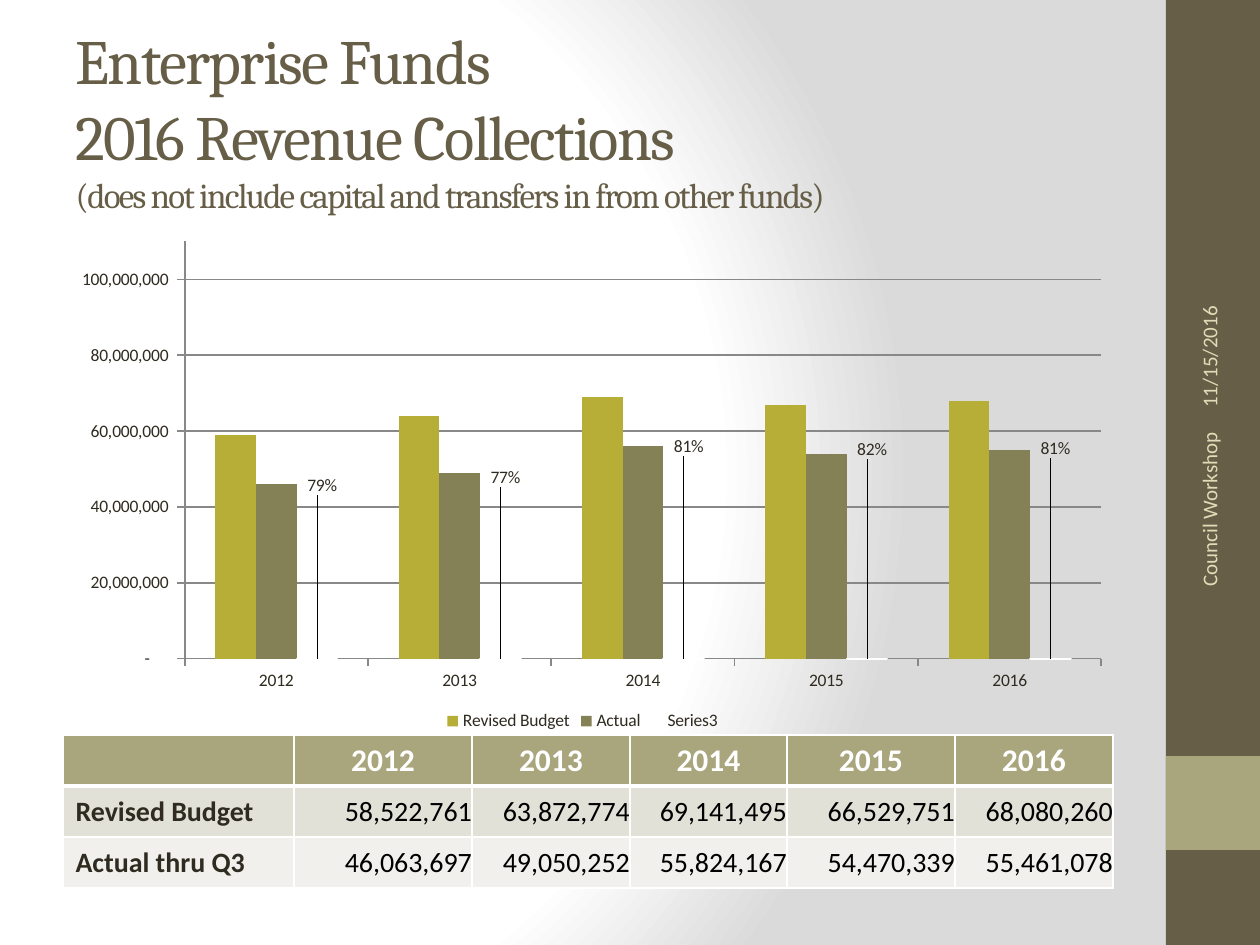
"""Build the enterprise funds revenue slide with its chart and table."""
from dataclasses import dataclass

from lxml.etree import SubElement
from pptx import Presentation
from pptx.chart.data import CategoryChartData
from pptx.dml.color import RGBColor
from pptx.enum.chart import XL_CHART_TYPE, XL_LABEL_POSITION, XL_LEGEND_POSITION, XL_TICK_MARK
from pptx.enum.shapes import MSO_SHAPE
from pptx.enum.text import MSO_ANCHOR, MSO_AUTO_SIZE, PP_ALIGN
from pptx.oxml import parse_xml
from pptx.oxml.ns import nsdecls, qn
from pptx.util import Pt

SCALE = 914400 / 126


@dataclass(frozen=True)
class Theme:
    dark: str = "675E47"
    khaki: str = "A9A57C"
    ink: str = "2F2B20"
    black: str = "000000"
    white: str = "FFFFFF"
    shade: str = "DADADA"
    cream: str = "DFDCB7"
    line: str = "888888"
    bars: tuple = ("B7AE38", "858157", "FFFFFF")
    bands: tuple = ("E2E1D7", "F1F0EC")
    serif: str = "Cambria"
    sans: str = "Calibri"
    title: int = 36
    note: int = 20
    head: int = 18
    cell: int = 16
    side: int = 12
    small: int = 10


def px(*sizes):
    return [round(size * SCALE) for size in sizes]


class Deck:
    def __init__(self, theme):
        self.theme = theme
        self.prs = Presentation()
        self.prs.slide_width, self.prs.slide_height = px(1260, 945)
        self.slide = self.prs.slides.add_slide(self.prs.slide_layouts[5])
        self.shapes = self.slide.shapes

    def style(self, font, size, color, face=None, bold=False):
        font.size = Pt(size)
        font.color.rgb = RGBColor.from_string(color)
        font.name = face or self.theme.sans
        font.bold = bold

    def paint(self, fill, color):
        fill.solid()
        fill.fore_color.rgb = RGBColor.from_string(color)

    def stroke(self, line, color):
        line.color.rgb = RGBColor.from_string(color)
        line.width = Pt(1)

    def backdrop(self):
        stops = ((0, self.theme.white), (75, self.theme.white), (100, self.theme.shade))
        marks = "".join(f'<a:gs pos="{at * 1000}"><a:srgbClr val="{color}"/></a:gs>'
                        for at, color in stops)
        back = parse_xml(
            f'<p:bg {nsdecls("p", "a")}><p:bgPr><a:gradFill rotWithShape="1">'
            f'<a:gsLst>{marks}</a:gsLst><a:path path="circle">'
            '<a:fillToRect l="20000" t="50000" r="100000" b="50000"/></a:path>'
            '</a:gradFill><a:effectLst/></p:bgPr></p:bg>')
        self.slide.element.find(qn("p:cSld")).insert(0, back)

    def block(self, box, color):
        shape = self.shapes.add_shape(MSO_SHAPE.RECTANGLE, *px(*box))
        shape.shadow.inherit = False
        self.paint(shape.fill, color)
        shape.line.fill.background()

    def title(self, box, lines):
        shape = self.shapes.title
        shape.left, shape.top, shape.width, shape.height = px(*box)
        frame = shape.text_frame
        frame.text = "\n".join(text for text, size in lines)
        frame.word_wrap = True
        frame.auto_size = MSO_AUTO_SIZE.NONE
        frame.vertical_anchor = MSO_ANCHOR.MIDDLE
        for para, (text, size) in zip(frame.paragraphs, lines):
            para.alignment = PP_ALIGN.LEFT
            run = para.runs[0]
            self.style(run.font, size, self.theme.dark, self.theme.serif)
            run.font._element.set("spc", "-100")

    def side(self, box, text, align):
        shape = self.shapes.add_textbox(*px(*box))
        shape.rotation = 270
        frame = shape.text_frame
        frame.text = text
        frame.word_wrap = True
        frame.vertical_anchor = MSO_ANCHOR.MIDDLE
        para = frame.paragraphs[0]
        para.alignment = align
        self.style(para.runs[0].font, self.theme.side, self.theme.cream)

    def edge(self, cell, base):
        props = cell._tc.get_or_add_tcPr()
        for spot, (tag, width) in enumerate(zip("LRTB", (1, 1, 1, base))):
            props.insert(spot, parse_xml(
                f'<a:ln{tag} {nsdecls("a")} w="{width * 12700}"><a:solidFill>'
                f'<a:srgbClr val="{self.theme.white}"/></a:solidFill></a:ln{tag}>'))

    def table(self, box, widths, rows):
        theme = self.theme
        grid = self.shapes.add_table(len(rows), len(widths), *px(*box)).table
        for col, width in zip(grid.columns, px(*widths)):
            col.width = width
        for r, row in enumerate(rows):
            grid.rows[r].height = px(box[3] / len(rows))[0]
            for c, text in enumerate(row):
                cell = grid.cell(r, c)
                cell.text = text
                self.paint(cell.fill, theme.bands[r - 1] if r else theme.khaki)
                self.edge(cell, 1 if r else 3)
                para = cell.text_frame.paragraphs[0]
                if r == 0:
                    look = theme.head, theme.white, PP_ALIGN.CENTER
                elif c == 0:
                    look = theme.cell, theme.ink, PP_ALIGN.LEFT
                else:
                    look = theme.cell, theme.black, PP_ALIGN.RIGHT
                    cell.margin_left = cell.margin_right = 0
                    cell.margin_top = cell.margin_bottom = 0
                if r:
                    cell.vertical_anchor = MSO_ANCHOR.MIDDLE
                para.alignment = look[2]
                for run in para.runs:
                    self.style(run.font, look[0], look[1], bold=r == 0 or c == 0)

    def chart(self, box, years, series, rises):
        theme = self.theme
        data = CategoryChartData()
        data.categories = years
        for name, values, form in series:
            data.add_series(name, values, form)
        chart = self.shapes.add_chart(
            XL_CHART_TYPE.COLUMN_CLUSTERED, *px(*box), data).chart
        chart.has_title = False
        self.style(chart.font, theme.small, theme.ink)
        chart.has_legend = True
        chart.legend.position = XL_LEGEND_POSITION.BOTTOM
        chart.legend.include_in_layout = False
        plot = chart.plots[0]
        plot.gap_width, plot.overlap, plot.vary_by_categories = 150, 0, False
        for one, color in zip(plot.series, theme.bars):
            self.paint(one.format.fill, color)
        self.stroke(plot.series[-1].format.line, theme.white)
        axis = chart.value_axis
        axis.minimum_scale, axis.maximum_scale, axis.major_unit = 0, 110_000_000, 20_000_000
        axis.tick_labels.number_format = '_(* #,##0_);_(* \\(#,##0\\);_(* "-"??_);_(@_)'
        axis.tick_labels.number_format_is_linked = False
        axis.has_major_gridlines = True
        for part in (axis, chart.category_axis, axis.major_gridlines):
            self.stroke(part.format.line, theme.line)
        for part in (axis, chart.category_axis):
            part.major_tick_mark = XL_TICK_MARK.OUTSIDE
        self.labels(plot.series[-1], [(5 / box[2], -rise / box[3]) for rise in rises])
        area = chart._chartSpace.chart.plotArea
        for old in area.findall(qn("c:layout")):
            area.remove(old)
        area.insert(0, self.layout(layoutTarget="inner", xMode="edge", yMode="edge",
                                   x=0.132, y=0.04, w=0.848, h=0.81))

    def layout(self, **marks):
        node = parse_xml(f'<c:layout {nsdecls("c")}><c:manualLayout/></c:layout>')
        for tag, value in marks.items():
            SubElement(node[0], qn(f"c:{tag}")).set("val", str(value))
        return node

    def labels(self, series, shifts):
        tags = series.data_labels
        tags.show_value = True
        tags.number_format, tags.number_format_is_linked = "0%", False
        tags.position = XL_LABEL_POSITION.CENTER
        for spot, (right, down) in enumerate(shifts):
            series.points[spot].data_label.position = XL_LABEL_POSITION.CENTER
            node = tags._element.findall(qn("c:dLbl"))[spot]
            node.insert(1, self.layout(x=right, y=down))
            node.insert(2, parse_xml(
                f'<c:numFmt {nsdecls("c")} formatCode="0%" sourceLinked="0"/>'))
        tags._element.append(parse_xml(
            f'<c:extLst {nsdecls("c")}><c:ext uri="{{CE6537A1-D6FC-4f65-9D91-7224C49458BB}}" '
            'xmlns:c15="http://schemas.microsoft.com/office/drawing/2012/chart">'
            '<c15:showLeaderLines val="0"/></c:ext></c:extLst>'))


def main():
    theme = Theme()
    deck = Deck(theme)
    years = ["2012", "2013", "2014", "2015", "2016"]
    budget = [58522761, 63872774, 69141495, 66529751, 68080260]
    actual = [46063697, 49050252, 55824167, 54470339, 55461078]
    share = [0.79, 0.77, 0.81, 0.82, 0.81]
    deck.backdrop()
    deck.block((1166, 0, 94, 945), theme.dark)
    deck.block((1166, 756, 94, 94), theme.khaki)
    deck.title((63, 27, 1050, 183), [
        ("Enterprise Funds", theme.title),
        ("2016 Revenue Collections", theme.title),
        ("(does not include capital and transfers in from other funds)", theme.note)])
    deck.table((63, 735, 1050, 153), (231, 178, 158, 157, 168, 158), [
        ["", *years],
        ["Revised Budget", *(f"{value:,}" for value in budget)],
        ["Actual thru Q3", *(f"{value:,}" for value in actual)]])
    deck.side((1041, 227, 336, 50), "11/15/2016", PP_ALIGN.LEFT)
    deck.side((1046, 558, 326, 50), "Council Workshop", PP_ALIGN.RIGHT)
    deck.chart((42, 221, 1081, 515), years, [
        ("Revised Budget", [round(value, -6) for value in budget], "#,##0"),
        ("Actual", [round(value, -6) for value in actual], "#,##0"),
        ("Series3", share, "0%")], (173, 181, 212, 209, 210))
    deck.prs.save("out.pptx")


if __name__ == "__main__":
    main()
